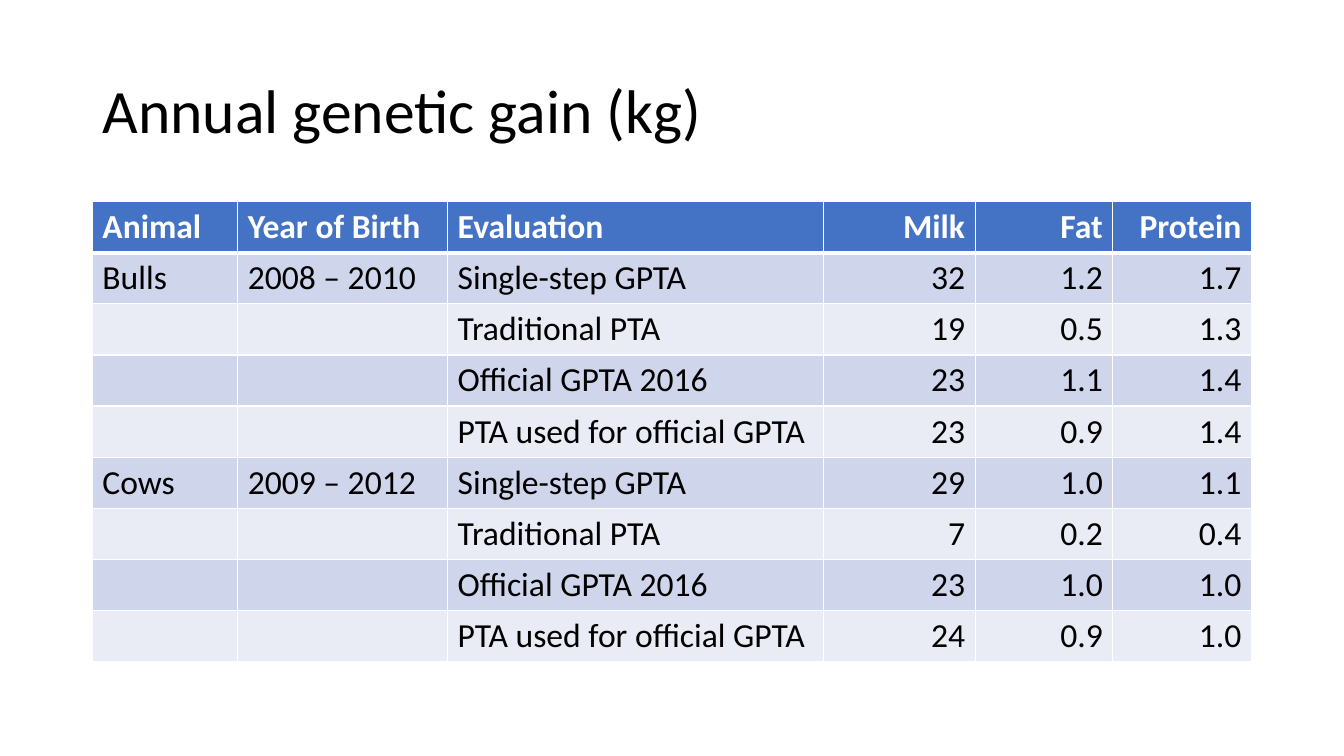
import pptx
import pptx.dml.color
import pptx.enum.text
import pptx.oxml
import pptx.oxml.ns
import pptx.util

COLORS = {
    "background": "FFFFFF",
    "text": "000000",
    "header": "4472C4",
    "header_text": "FFFFFF",
    "odd_row": "CFD5EA",
    "even_row": "E9EBF5",
    "border": "FFFFFF",
}

HEADINGS = ("Animal", "Year of Birth", "Evaluation", "Milk", "Fat", "Protein")
COLUMN_WIDTHS = (17.3, 25, 44.7, 18.1, 16.4, 16.5)  # grid columns
FIRST_NUMBER_COLUMN = 3
EVALUATIONS = (
    "Single-step GPTA",
    "Traditional PTA",
    "Official GPTA 2016",
    "PTA used for official GPTA",
)
GAINS = {
    ("Bulls", "2008 – 2010"): (
        ("32", "1.2", "1.7"),
        ("19", "0.5", "1.3"),
        ("23", "1.1", "1.4"),
        ("23", "0.9", "1.4"),
    ),
    ("Cows", "2009 – 2012"): (
        ("29", "1.0", "1.1"),
        ("7", "0.2", "0.4"),
        ("23", "1.0", "1.0"),
        ("24", "0.9", "1.0"),
    ),
}


def color(name):
    return pptx.dml.color.RGBColor.from_string(COLORS[name])


def gain_rows():
    """Show each animal group only on its first row."""
    rows = [HEADINGS]
    for group, gains in GAINS.items():
        for index, (evaluation, values) in enumerate(zip(EVALUATIONS, gains)):
            rows.append((group if index == 0 else ("", "")) + (evaluation,) + values)
    return rows


class SlideBuilder:
    """Place elements on a grid of 160 columns by 90 rows."""

    font_name = "Calibri"
    unit = pptx.util.Inches(1) / 12

    def __init__(self, presentation):
        presentation.slide_width = self.length(160)
        presentation.slide_height = self.length(90)
        self.slide = presentation.slides.add_slide(presentation.slide_layouts[5])
        self.slide.background.fill.solid()
        self.slide.background.fill.fore_color.rgb = color("background")

    def length(self, units):
        return pptx.util.Emu(round(units * self.unit))

    def format_text(self, paragraph, size, color_name, align, bold=False):
        paragraph.alignment = align
        for run in paragraph.runs:
            run.font.name = self.font_name
            run.font.size = pptx.util.Pt(size)
            run.font.bold = bold
            run.font.color.rgb = color(color_name)

    def title(self, text, left, top, width, height):
        shape = self.slide.shapes.title
        shape.left, shape.top = self.length(left), self.length(top)
        shape.width, shape.height = self.length(width), self.length(height)
        frame = shape.text_frame
        frame.text = text
        frame.word_wrap = True
        frame.auto_size = pptx.enum.text.MSO_AUTO_SIZE.NONE
        frame.vertical_anchor = pptx.enum.text.MSO_ANCHOR.MIDDLE
        paragraph = frame.paragraphs[0]
        paragraph.line_spacing = 0.9
        self.format_text(paragraph, 44, "text", pptx.enum.text.PP_ALIGN.LEFT)

    def borders(self, cell, top, bottom):
        properties = cell._tc.get_or_add_tcPr()
        for side, points in (("L", 1), ("R", 1), ("T", top), ("B", bottom)):
            properties.append(pptx.oxml.parse_xml(
                f'<a:ln{side} {pptx.oxml.ns.nsdecls("a")} w="{pptx.util.Pt(points)}">'
                f'<a:solidFill><a:srgbClr val="{COLORS["border"]}"/></a:solidFill>'
                f'</a:ln{side}>'))

    def table(self, rows, column_widths, left, top, height):
        table = self.slide.shapes.add_table(
            len(rows), len(column_widths), self.length(left), self.length(top),
            self.length(sum(column_widths)), self.length(height)).table
        for column, width in zip(table.columns, column_widths):
            column.width = self.length(width)
        for row_index, values in enumerate(rows):
            for column_index, text in enumerate(values):
                self.cell(table.cell(row_index, column_index), text, row_index,
                          column_index >= FIRST_NUMBER_COLUMN)

    def cell(self, cell, text, row_index, is_number):
        is_header = row_index == 0
        # A thick rule separates the header from the body
        self.borders(cell, 3 if row_index == 1 else 1, 3 if is_header else 1)
        band = "odd_row" if row_index % 2 else "even_row"
        cell.fill.solid()
        cell.fill.fore_color.rgb = color("header" if is_header else band)
        if text:
            cell.text_frame.text = text
            alignments = pptx.enum.text.PP_ALIGN
            self.format_text(
                cell.text_frame.paragraphs[0], 24,
                "header_text" if is_header else "text",
                alignments.RIGHT if is_number else alignments.LEFT, is_header)


def main():
    presentation = pptx.Presentation()
    builder = SlideBuilder(presentation)

    # Title
    builder.title("Annual genetic gain (kg)", 11, 4.8, 138, 17.4)

    # Gains by animal and evaluation
    builder.table(gain_rows(), COLUMN_WIDTHS, 11, 24, 54)

    presentation.save("out.pptx")


if __name__ == "__main__":
    main()
